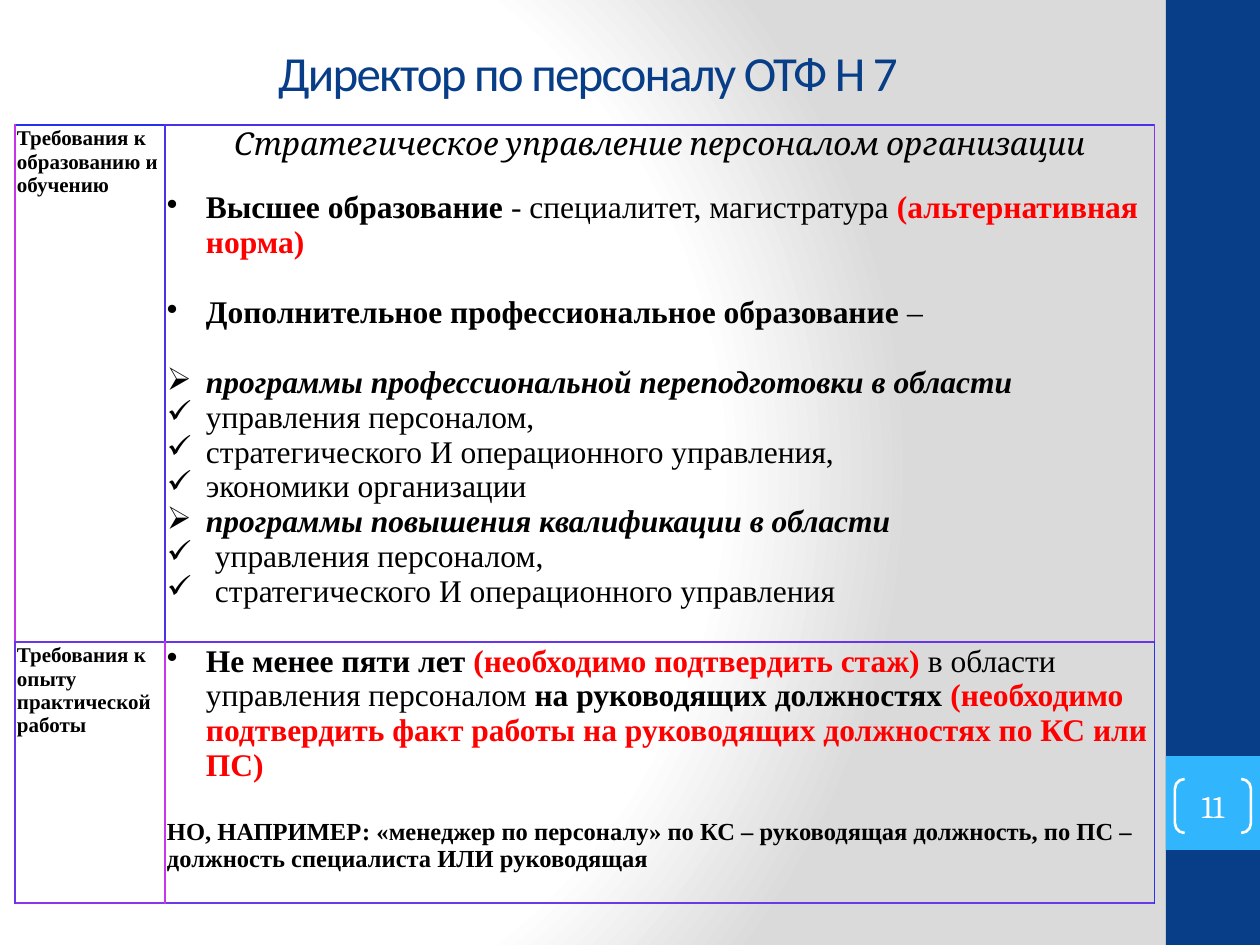
from lxml import etree
from pptx import Presentation
from pptx.dml.color import RGBColor
from pptx.enum.shapes import MSO_SHAPE
from pptx.enum.text import MSO_ANCHOR, PP_ALIGN
from pptx.oxml import parse_xml
from pptx.oxml.ns import qn
from pptx.util import Pt

RECTANGLE, BRACKETS = MSO_SHAPE.RECTANGLE, MSO_SHAPE.DOUBLE_BRACKET
MIDDLE = MSO_ANCHOR.MIDDLE
CENTER, LEFT = PP_ALIGN.CENTER, PP_ALIGN.LEFT

EMU_PER_PX = 914400 // 126
NAVY = RGBColor(0x07, 0x3E, 0x87)
SKY = RGBColor(0x31, 0xB6, 0xFD)
WHITE = RGBColor(0xFF, 0xFF, 0xFF)
GREY = RGBColor(0xDA, 0xDA, 0xDA)
BLACK = RGBColor(0, 0, 0)
RED = RGBColor(0xFF, 0, 0)
SERIF, HEADING, DISPLAY = "Times New Roman", "Calibri", "Cambria"
DRAWING_NS = "http://schemas.openxmlformats.org/drawingml/2006/main"


def px(length):
    return length * EMU_PER_PX


class SlideBuilder:
    """Holds the current slide and draws each kind of element on it."""

    def __init__(self, slide):
        self.slide = slide

    def background(self, stops, focus):
        fill = self.slide.background.fill
        fill.solid()
        stop_xml = "".join(
            f'<a:gs pos="{pos * 1000}"><a:srgbClr val="{color}"/></a:gs>' for pos, color in stops)
        sides = " ".join(f'{side}="{value * 1000}"' for side, value in zip("ltrb", focus))
        gradient = parse_xml(
            f'<a:gradFill xmlns:a="{DRAWING_NS}" rotWithShape="1"><a:gsLst>{stop_xml}</a:gsLst>'
            f'<a:path path="circle"><a:fillToRect {sides}/></a:path></a:gradFill>')
        solid = next(self.slide.element.iter(qn("a:solidFill")))
        solid.getparent().replace(solid, gradient)

    def shape(self, kind, box, fill=None, line=None):
        shape = self.slide.shapes.add_shape(kind, *map(px, box))
        shape.shadow.inherit = False
        if fill is None:
            shape.fill.background()
        else:
            shape.fill.solid()
            shape.fill.fore_color.rgb = fill
        if line is None:
            shape.line.fill.background()
        else:
            shape.line.color.rgb = line
            shape.line.width = Pt(1.5)
        return shape

    def textbox(self, box):
        return self.slide.shapes.add_textbox(*map(px, box))

    def label(self, shape, text, size, font, color, tracking=0):
        frame = shape.text_frame
        frame.word_wrap = True
        frame.vertical_anchor = MIDDLE
        frame.margin_left = frame.margin_right = frame.margin_top = frame.margin_bottom = 0
        span = self.paragraph(frame.paragraphs[0], [(text, "", color)], size, font, CENTER)[0]
        if tracking:
            span.font._element.set("spc", str(tracking))

    def paragraph(self, para, spans, size=18, font=SERIF, align=LEFT,
                  bullet=None, indent=39, before=0):
        para.alignment = align
        para.font.size, para.font.name = Pt(size), font
        para.space_before = Pt(before)
        if bullet:
            properties = para._p.get_or_add_pPr()
            properties.set("marL", str(px(indent)))
            properties.set("indent", str(-px(indent)))
            mark = etree.Element(qn("a:buChar"), char=bullet)
            properties.find(qn("a:defRPr")).addprevious(mark)
        runs = []
        for text, style, color in spans:
            span = para.add_run()
            span.text = text
            span.font.bold, span.font.italic = "b" in style, "i" in style
            span.font.color.rgb = color
            runs.append(span)
        return runs

    def table(self, box, columns, rows, contents, borders):
        table = self.slide.shapes.add_table(len(rows), len(columns), *map(px, box)).table
        table.first_row = table.horz_banding = False
        for column, width in zip(table.columns, columns):
            column.width = px(width)
        for row, height in zip(table.rows, rows):
            row.height = px(height)
        for cell, paragraphs, colors in zip(table.iter_cells(), contents, borders):
            cell.fill.background()
            cell.margin_left = cell.margin_right = cell.margin_top = cell.margin_bottom = px(2)
            self.cell_borders(cell, colors)
            frame = cell.text_frame
            for index, options in enumerate(paragraphs):
                para = frame.add_paragraph() if index else frame.paragraphs[0]
                self.paragraph(para, **options)

    def cell_borders(self, cell, colors):
        properties = cell._tc.get_or_add_tcPr()
        for index, (side, color) in enumerate(zip("LRTB", colors)):
            properties.insert(index, parse_xml(
                f'<a:ln{side} xmlns:a="{DRAWING_NS}" w="{Pt(0.75)}"><a:solidFill>'
                f'<a:srgbClr val="{color}"/></a:solidFill></a:ln{side}>'))


def item(bullet, *spans, **options):
    return dict(spans=spans, bullet=bullet, **options)


def plain(text):
    return text, "", BLACK


def bold(text, color=BLACK):
    return text, "b", color


def emphasis(text):
    return text, "bi", BLACK


DOT, ARROW, CHECK = "•", "➢", "✓"
BLANK_LINE = 20

education = [
    dict(spans=[("Стратегическое управление персоналом организации", "i", BLACK)],
         font=DISPLAY, align=CENTER),
    item(DOT, bold("Высшее образование "), plain("- специалитет, магистратура "),
         bold("(альтернативная норма)", RED), before=15.5),
    item(DOT, bold("Дополнительное профессиональное образование "), plain("–"),
         before=BLANK_LINE),
    item(ARROW, emphasis("программы профессиональной переподготовки в области"),
         before=BLANK_LINE),
    item(CHECK, plain("управления персоналом,")),
    item(CHECK, plain("стратегического И операционного управления,")),
    item(CHECK, plain("экономики организации")),
    item(ARROW, emphasis("программы повышения квалификации в области")),
    item(CHECK, plain("управления персоналом,"), indent=48),
    item(CHECK, plain("стратегического И операционного управления"), indent=48),
]
experience = [
    item(DOT, bold("Не менее пяти лет "), bold("(необходимо подтвердить стаж) ", RED),
         plain("в области управления персоналом "), bold("на руководящих должностях "),
         bold("(необходимо подтвердить факт работы на руководящих должностях "
              "по КС или ПС)", RED)),
    dict(spans=[bold("НО, НАПРИМЕР: «менеджер по персоналу» по КС – руководящая должность, "
                     "по ПС – должность специалиста ИЛИ руководящая")],
         size=14, before=BLANK_LINE),
]
row_titles = [[dict(spans=[bold(text)], size=12)] for text in (
    "Требования к образованию и обучению", "Требования к опыту практической работы")]

# Cell border colours: left, right, top, bottom
borders = [
    ("C833EA", "4833EA", "2831EA", "6837EA"),
    ("4833EA", "8831EA", "4831EA", "6836EA"),
    ("6835EA", "C837EA", "6837EA", "8836EA"),
    ("C837EA", "2835EA", "6836EA", "683AEA"),
]

deck = Presentation()
deck.slide_width, deck.slide_height = px(1260), px(945)
page = SlideBuilder(deck.slides.add_slide(deck.slide_layouts[6]))

# Background and side band
page.background([(0, WHITE), (75, WHITE), (100, GREY)], (20, 50, 100, 50))
page.shape(RECTANGLE, (1166, 0, 94, 945), NAVY)
page.shape(RECTANGLE, (1166, 756, 94, 94), SKY)

# Title
page.label(page.textbox((63, 38, 1050, 68)), "Директор по персоналу ОТФ Н 7",
           28, HEADING, NAVY, tracking=-100)

# Requirements table
page.table((15, 125, 1140, 774), (150, 990), (513, 261),
           [row_titles[0], education, row_titles[1], experience], borders)

# Slide number
number = page.shape(BRACKETS, (1175, 779, 76, 54), line=WHITE)
number.adjustments[0] = 0.18
page.label(number, "11", 18, DISPLAY, WHITE)

deck.save("out.pptx")
